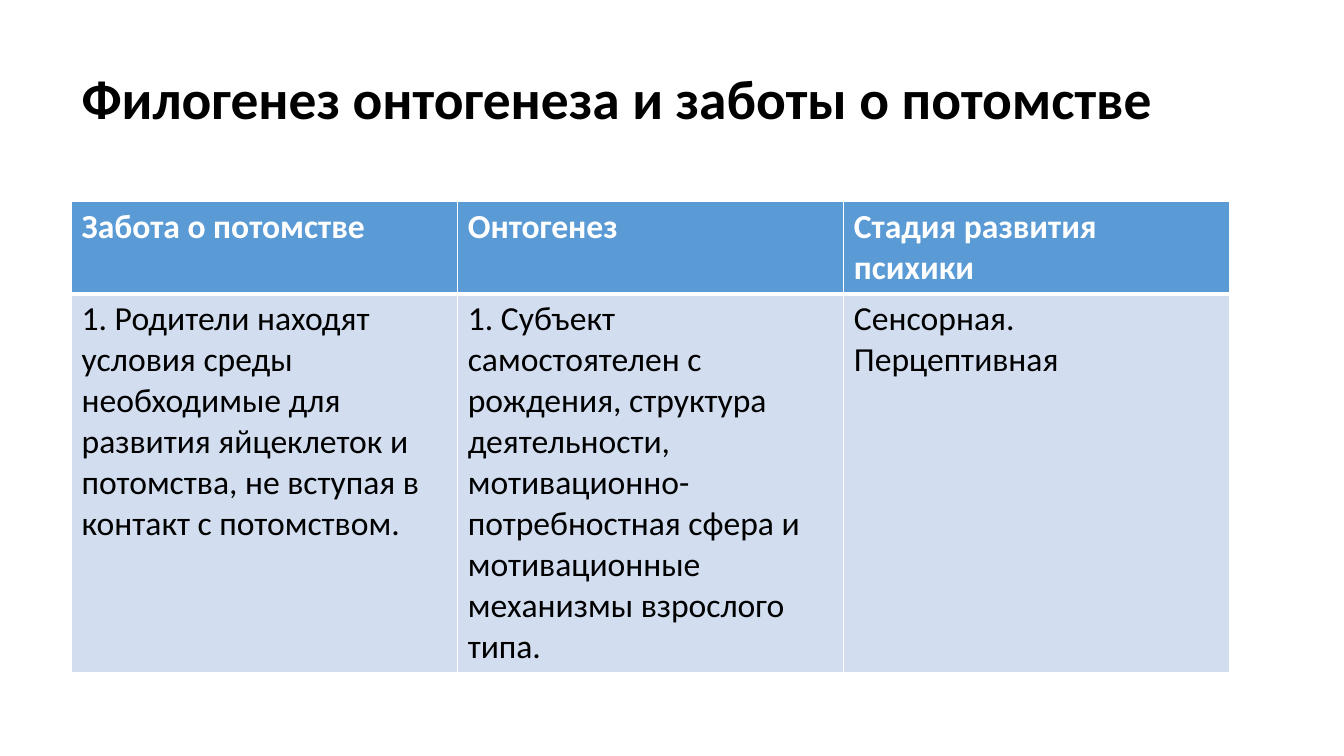
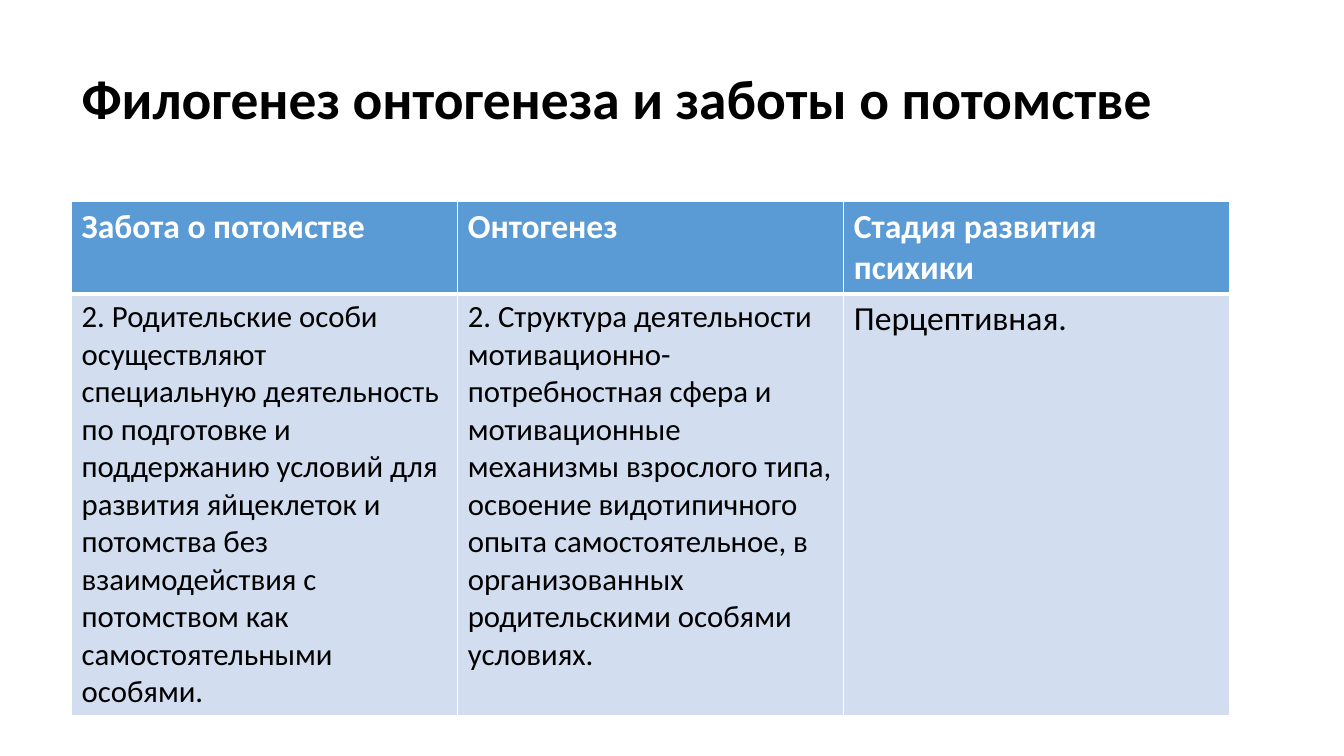
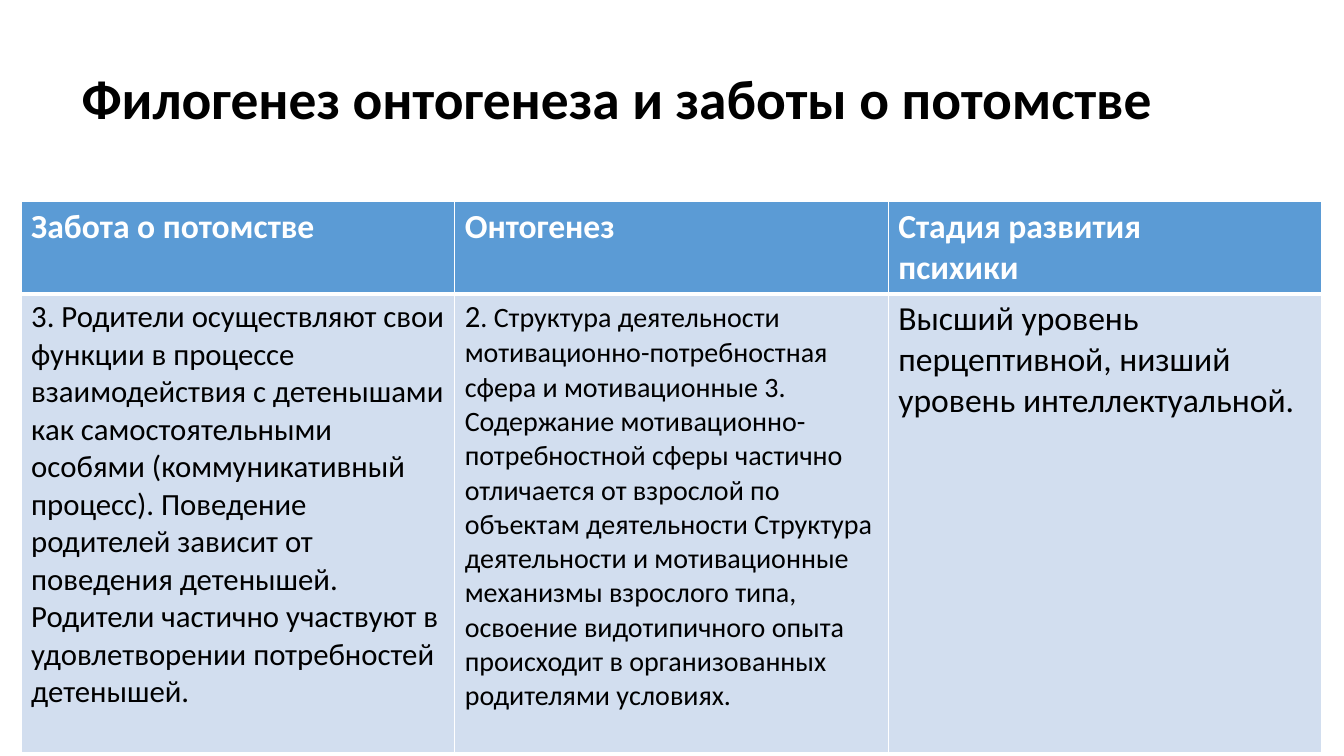
import dataclasses

import lxml.etree
import pptx
import pptx.dml.color
import pptx.enum.text
import pptx.oxml.ns
import pptx.util

PX = 9144  # EMU in one px, 100 px to the inch


@dataclasses.dataclass(frozen=True)
class Theme:
    font: str = "Calibri"
    ink: str = "000000"
    paper: str = "FFFFFF"
    header: str = "5B9BD5"
    body: str = "D2DEEF"
    title_size: float = 39.6
    large: int = 24
    medium: int = 22
    small: int = 20
    thin: int = 1
    thick: int = 3


THEME = Theme()
TITLE = "Филогенез онтогенеза и заботы о потомстве"
HEADINGS = ["Забота о потомстве", "Онтогенез", "Стадия развития\nпсихики"]


def px(n):
    return pptx.util.Emu(n * PX)


def rgb(color):
    return pptx.dml.color.RGBColor.from_string(color)


def add_run(p, text, size=THEME.large, color=THEME.ink, bold=False):
    r = p.add_run()
    r.text = text
    r.font.name = THEME.font
    r.font.size = pptx.util.Pt(size)
    r.font.bold = bold
    r.font.color.rgb = rgb(color)


def set_borders(cell, **widths):
    """Draw the cell's edges (L, R, T, B) with widths in points."""
    tcPr = cell._tc.get_or_add_tcPr()
    for i, (edge, width) in enumerate(widths.items()):
        ln = lxml.etree.Element(pptx.oxml.ns.qn(f"a:ln{edge}"),
                                w=str(pptx.util.Pt(width)))
        fill = lxml.etree.SubElement(ln, pptx.oxml.ns.qn("a:solidFill"))
        lxml.etree.SubElement(fill, pptx.oxml.ns.qn("a:srgbClr"), val=THEME.paper)
        tcPr.insert(i, ln)


class Deck:
    def __init__(self, width, height):
        self.prs = pptx.Presentation()
        self.prs.slide_width, self.prs.slide_height = px(width), px(height)
        self.s = None

    def add_slide(self, title):
        self.s = self.prs.slides.add_slide(self.prs.slide_layouts[5])
        sp = self.s.shapes.title
        sp.left, sp.top, sp.width, sp.height = map(px, (71, 28, 1150, 145))
        tf = sp.text_frame
        tf.word_wrap = True
        tf.auto_size = pptx.enum.text.MSO_AUTO_SIZE.NONE
        tf.vertical_anchor = pptx.enum.text.MSO_ANCHOR.MIDDLE
        p = tf.paragraphs[0]
        p.alignment = pptx.enum.text.PP_ALIGN.LEFT
        p.line_spacing = 0.9
        add_run(p, title, size=THEME.title_size, bold=True)

    def add_table(self, left, col_width, row_heights, contents):
        """Place a headed table; each cell is a list of (text, size) runs."""
        headings = [[(text, THEME.large)] for text in HEADINGS]
        table = self.s.shapes.add_table(
            2, len(headings), px(left), px(200),
            px(col_width * len(headings)), px(sum(row_heights))).table
        table.horz_banding = False
        for column in table.columns:
            column.width = px(col_width)
        for row, height in zip(table.rows, row_heights):
            row.height = px(height)
        for i, runs in enumerate(headings):
            self.fill_cell(table.cell(0, i), runs, is_header=True)
        for i, runs in enumerate(contents):
            self.fill_cell(table.cell(1, i), runs, is_header=False)

    def fill_cell(self, cell, runs, is_header):
        """Write the runs, with a new paragraph at each line break."""
        cell.fill.solid()
        cell.fill.fore_color.rgb = rgb(THEME.header if is_header else THEME.body)
        tf = cell.text_frame
        p = tf.paragraphs[0]
        for text, size in runs:
            for i, line in enumerate(text.split("\n")):
                if i:
                    p = tf.add_paragraph()
                add_run(p, line, size=size, bold=is_header,
                        color=THEME.paper if is_header else THEME.ink)
        set_borders(cell, L=THEME.thin, R=THEME.thin,
                    T=THEME.thin if is_header else THEME.thick,
                    B=THEME.thick if is_header else THEME.thin)


def main():
    narrow = dict(left=71, col_width=383, row_heights=(42, 42))
    wide = dict(left=21, col_width=430, row_heights=(90, 455))
    stages = [
        (narrow, [
            [("1. Родители находят условия среды необходимые для развития "
              "яйцеклеток и потомства, не вступая в контакт с потомством.",
              THEME.large)],
            [("1. Субъект самостоятелен с рождения, структура деятельности, "
              "мотивационно-потребностная сфера и мотивационные механизмы "
              "взрослого типа.", THEME.large)],
            [("Сенсорная.\nПерцептивная", THEME.large)],
        ]),
        (narrow, [
            [("2. Родительские особи осуществляют специальную деятельность по "
              "подготовке и поддержанию условий для развития яйцеклеток и "
              "потомства без взаимодействия с потомством как самостоятельными "
              "особями.", THEME.medium)],
            [("2. Структура деятельности мотивационно-потребностная сфера и "
              "мотивационные механизмы взрослого типа, освоение видотипичного "
              "опыта самостоятельное, в организованных родительскими особями "
              "условиях.", THEME.medium)],
            [("Перцептивная.", THEME.large)],
        ]),
        (wide, [
            [("3. Родители осуществляют свои функции в процессе взаимодействия "
              "с детенышами как самостоятельными особями (коммуникативный "
              "процесс). Поведение родителей зависит от поведения детенышей. "
              "Родители частично участвуют в удовлетворении потребностей "
              "детенышей.", THEME.medium)],
            [("2", THEME.medium),
             (". Структура деятельности мотивационно-потребностная сфера и "
              "мотивационные 3. Содержание мотивационно-потребностной сферы "
              "частично отличается от взрослой по объектам деятельности "
              "Структура деятельности и мотивационные механизмы взрослого "
              "типа, освоение видотипичного опыта происходит в организованных "
              "родителями условиях.", THEME.small)],
            [("Высший уровень перцептивной, низший уровень интеллектуальной.",
              THEME.large)],
        ]),
    ]
    deck = Deck(1333, 750)
    for layout, contents in stages:
        deck.add_slide(TITLE)
        deck.add_table(contents=contents, **layout)
    deck.prs.save("out.pptx")


if __name__ == "__main__":
    main()
